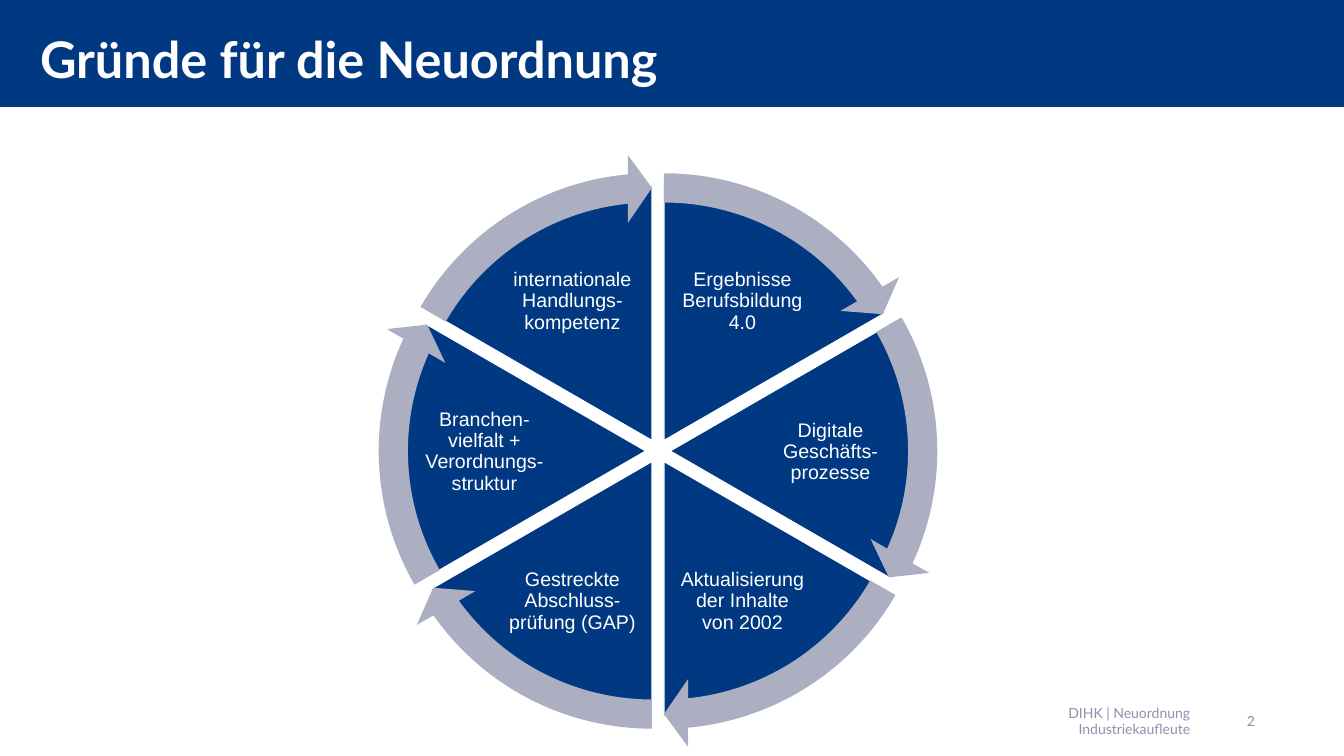
from math import cos, radians, sin

from pptx import Presentation
from pptx.dml.color import RGBColor
from pptx.enum.shapes import MSO_SHAPE
from pptx.enum.text import MSO_ANCHOR, MSO_AUTO_SIZE, PP_ALIGN
from pptx.util import Pt

PIE, ARROW = MSO_SHAPE.PIE, MSO_SHAPE.CIRCULAR_ARROW
MIDDLE, NO_FIT = MSO_ANCHOR.MIDDLE, MSO_AUTO_SIZE.NONE
LEFT, CENTER, RIGHT = PP_ALIGN.LEFT, PP_ALIGN.CENTER, PP_ALIGN.RIGHT

EMU_PER_PX = 12192000 / 1344
COLORS = {"blue": "003882", "gray": "ABAFC1", "footer": "8C91AD", "white": "FFFFFF"}
HEADING_FONT, BODY_FONT = "Lato", "Arial"

# Wheel geometry in px; angles in degrees, clockwise from the right
CX, CY = 658, 451
PIE_SIZE, ARROW_SIZE = 510, 573
GAP = 12
STEP = 60
HEAD_ANGLE = 3.275
ADJ_PER_DEGREE = 0.6

# Label and its box (left, top, width, height), clockwise from the top
SEGMENTS = [
    ("Ergebnisse Berufsbildung 4.0", (676, 250, 133, 103)),
    ("Digitale Geschäfts-prozesse", (761, 402, 139, 100)),
    ("Aktualisierung der Inhalte von 2002", (676, 550, 133, 103)),
    ("Gestreckte Abschluss-prüfung (GAP)", (506, 550, 133, 103)),
    ("Branchen-vielfalt + Verordnungs-struktur", (415, 402, 139, 100)),
    ("internationale Handlungs-kompetenz", (506, 250, 133, 103)),
]


def px(n):
    return round(n * EMU_PER_PX)


def rgb(name):
    return RGBColor.from_string(COLORS[name])


class SlideBuilder:
    def __init__(self, prs):
        self.s = prs.slides.add_slide(prs.slide_layouts[5])
        self.wheel = self.s.shapes.add_group_shape()

    def add_text(self, tf, text, size, font, color, align, bold=False):
        tf.word_wrap = True
        tf.auto_size = NO_FIT
        tf.vertical_anchor = MIDDLE
        p = tf.paragraphs[0]
        p.alignment = align
        r = p.add_run()
        r.text = text
        r.font.size, r.font.name, r.font.bold = Pt(size), font, bold
        r.font.color.rgb = rgb(color)
        return p

    def margins(self, tf, n):
        tf.margin_left = tf.margin_right = tf.margin_top = tf.margin_bottom = px(n)

    def title(self, text, box, indent):
        sp = self.s.shapes.title
        sp.left, sp.top, sp.width, sp.height = map(px, box)
        sp.fill.solid()
        sp.fill.fore_color.rgb = rgb("blue")
        self.margins(sp.text_frame, 0)
        p = self.add_text(sp.text_frame, text, 36, HEADING_FONT, "white", LEFT, True)
        p.line_spacing = Pt(50)
        pPr = p._p.get_or_add_pPr()
        pPr.set("marL", str(px(indent)))
        pPr.set("indent", "0")

    def wheel_part(self, kind, size, middle, color, adjustments, outline=None):
        left = CX + GAP * cos(radians(middle)) - size / 2
        top = CY + GAP * sin(radians(middle)) - size / 2
        sp = self.wheel.shapes.add_shape(kind, px(left), px(top), px(size), px(size))
        sp.shadow.inherit = False
        for i, value in enumerate(adjustments):
            sp.adjustments[i] = value
        sp.fill.solid()
        sp.fill.fore_color.rgb = rgb(color)
        if outline:
            sp.line.color.rgb = rgb(outline)
            sp.line.width = Pt(1)
        else:
            sp.line.fill.background()

    def label(self, text, box):
        tf = self.wheel.shapes.add_textbox(*map(px, box)).text_frame
        self.margins(tf, 2)
        p = self.add_text(tf, text, 14, BODY_FONT, "white", CENTER)
        p.line_spacing = 0.9

    def footer(self, text, box):
        tf = self.s.shapes.add_textbox(*map(px, box)).text_frame
        self.add_text(tf, text, 10, HEADING_FONT, "footer", RIGHT)


def main():
    prs = Presentation()
    prs.slide_width, prs.slide_height = px(1344), px(756)
    b = SlideBuilder(prs)

    # Title bar
    b.title("Gründe für die Neuordnung", (0, 0, 1344, 107), 40)

    # Wheel segments with labels
    starts = [(270 + STEP * i) % 360 for i in range(len(SEGMENTS))]
    for start, (text, box) in zip(starts, SEGMENTS):
        end = (start + STEP) % 360
        b.wheel_part(PIE, PIE_SIZE, start + STEP / 2, "blue",
                     (start * ADJ_PER_DEGREE, end * ADJ_PER_DEGREE), "white")
        b.label(text, box)

    # Arrows around the wheel
    for start in starts:
        end = (start + STEP) % 360
        b.wheel_part(ARROW, ARROW_SIZE, start + STEP / 2, "gray",
                     (0.051, HEAD_ANGLE, end * ADJ_PER_DEGREE - HEAD_ANGLE,
                      start * ADJ_PER_DEGREE, 0.059))

    # Footer and page number
    b.footer("DIHK | Neuordnung Industriekaufleute", (945, 701, 255, 40))
    b.footer("2", (1202, 701, 63, 40))

    prs.save("out.pptx")


if __name__ == "__main__":
    main()
